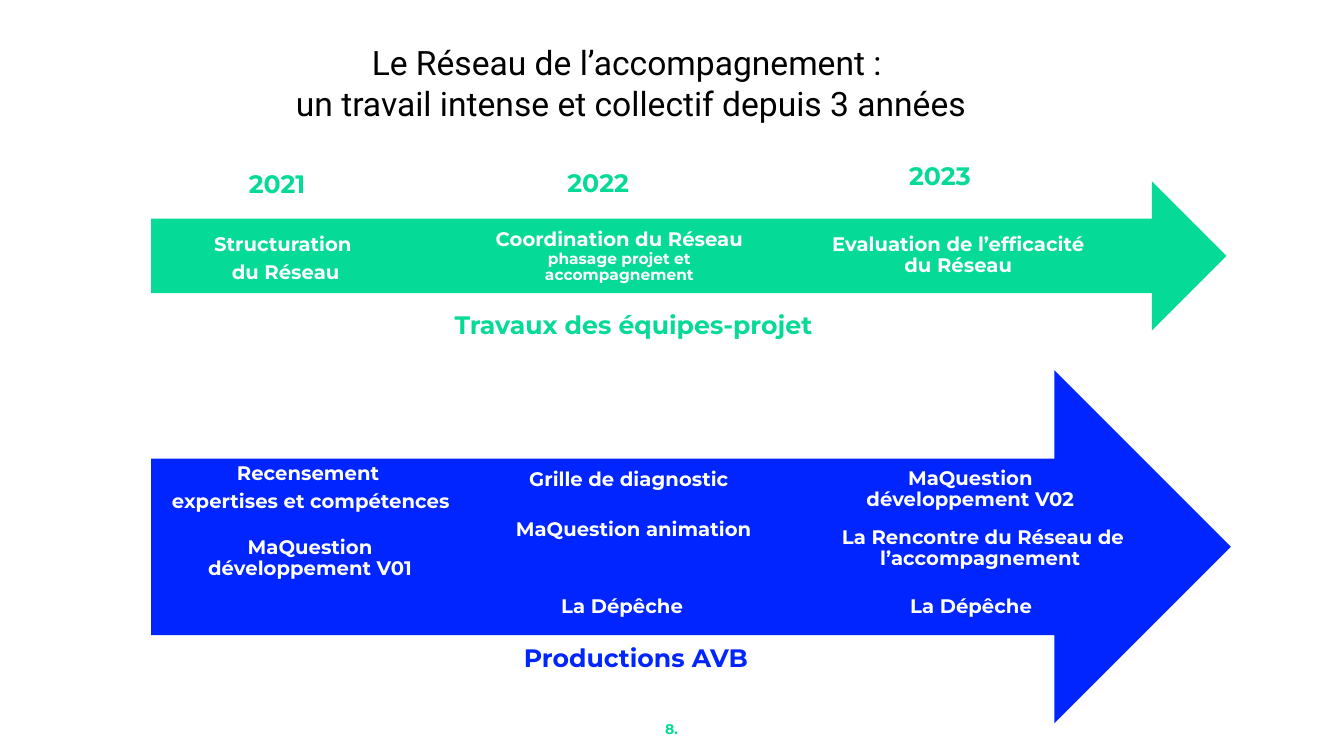
import pptx
import pptx.dml.color
import pptx.enum.shapes
import pptx.enum.text
import pptx.util

Cm = pptx.util.Cm
Pt = pptx.util.Pt
RGBColor = pptx.dml.color.RGBColor
ALIGN = pptx.enum.text.PP_ALIGN
ANCHOR = pptx.enum.text.MSO_ANCHOR

GREEN = RGBColor(0x05, 0xDA, 0x96)
BLUE = RGBColor(0x00, 0x25, 0xFF)
WHITE = RGBColor(0xFF, 0xFF, 0xFF)
BLACK = RGBColor(0x00, 0x00, 0x00)


def write_text(frame, text, *, size, color, font="Montserrat", bold=True,
               align=ALIGN.CENTER, spacing=1.0, after=0, detail="", detail_size=11):
    """Fill a frame with one paragraph per line, plus an optional smaller run."""
    frame.word_wrap = True
    for index, line in enumerate(text.split("\n")):
        paragraph = frame.paragraphs[0] if index == 0 else frame.add_paragraph()
        paragraph.alignment = align
        paragraph.line_spacing = spacing
        paragraph.space_before = Pt(0)
        paragraph.space_after = Pt(after)
        for words, points in ((line, size), (detail, detail_size)):
            if words:
                run = paragraph.add_run()
                run.text = words
                run.font.name = font
                run.font.size = Pt(points)
                run.font.bold = bold
                run.font.color.rgb = color


class RoadmapSlide:
    """Hold the current slide and the style of its elements."""

    def __init__(self, presentation):
        """Add a title-only slide."""
        self.slide = presentation.slides.add_slide(presentation.slide_layouts[5])

    def title(self, text, left, top, width, height):
        """Place and format the title."""
        title = self.slide.shapes.title
        title.left, title.top = Cm(left), Cm(top)
        title.width, title.height = Cm(width), Cm(height)
        title.text_frame.auto_size = pptx.enum.text.MSO_AUTO_SIZE.NONE
        title.text_frame.vertical_anchor = ANCHOR.TOP
        write_text(title.text_frame, text, size=24, color=BLACK, font="Roboto", bold=False)

    def arrow(self, left, top, width, height, color):
        """Draw a plain right arrow."""
        arrow = self.slide.shapes.add_shape(
            pptx.enum.shapes.MSO_SHAPE.RIGHT_ARROW, Cm(left), Cm(top), Cm(width), Cm(height))
        arrow.shadow.inherit = False
        arrow.fill.solid()
        arrow.fill.fore_color.rgb = color
        arrow.line.fill.background()

    def caption(self, text, left, top, width, height, **style):
        """Add a coloured text outside the arrows."""
        box = self.slide.shapes.add_textbox(Cm(left), Cm(top), Cm(width), Cm(height))
        write_text(box.text_frame, text, **style)

    def step(self, text, left, top, width, height, **style):
        """Add a white text in an unfilled outline on an arrow."""
        right, bottom = Cm(left + width), Cm(top + height)
        outline = self.slide.shapes.build_freeform(Cm(left), Cm(top))
        outline.add_line_segments([(right, Cm(top)), (right, bottom), (Cm(left), bottom)])
        step = outline.convert_to_shape()
        step.shadow.inherit = False
        step.fill.background()
        step.line.fill.background()
        frame = step.text_frame
        frame.vertical_anchor = ANCHOR.MIDDLE
        frame.margin_left = frame.margin_right = 0
        frame.margin_top = frame.margin_bottom = Cm(0.4)
        write_text(frame, text, size=14, color=WHITE, spacing=0.9, **style)


def main():
    """Build and save the presentation."""
    presentation = pptx.Presentation()
    presentation.slide_width, presentation.slide_height = Cm(33.87), Cm(19.05)
    roadmap = RoadmapSlide(presentation)

    roadmap.title("Le Réseau de l’accompagnement : \nun travail intense et collectif depuis 3 années",
                  3.53, 0.94, 24.74, 2.31)
    roadmap.arrow(3.81, 4.57, 27.1, 3.76, GREEN)
    roadmap.arrow(3.81, 9.33, 27.21, 8.9, BLUE)

    for year, left, top in (("2021", 6.02, 4.11), ("2022", 14.05, 4.09), ("2023", 22.66, 3.91)):
        roadmap.caption(year, left, top, 3.07, 1.02, size=18, color=GREEN, align=ALIGN.LEFT)
    roadmap.caption("Travaux des équipes-projet", 8.84, 7.67, 14.25, 1.02, size=18, color=GREEN)
    roadmap.caption("Productions AVB ", 8.99, 16.05, 14.25, 1.02, size=18, color=BLUE)
    roadmap.caption("8.", 2.42, 18.03, 29.01, 0.69, size=10, color=GREEN)

    roadmap.step("Structuration \ndu Réseau", 3.81, 5.38, 6.78, 2.31, after=5)
    roadmap.step("Coordination du Réseau ", 12.22, 5.53, 6.78, 1.88,
                 detail="phasage projet et accompagnement")
    roadmap.step("Evaluation de l’efficacité du Réseau", 20.76, 5.29, 6.78, 2.31)

    roadmap.step("Recensement \nexpertises et compétences", 3.29, 11.3, 9.09, 2.01, after=5)
    productions = (
        ("MaQuestion développement V01", 5.11, 12.73, 5.41, 2.69),
        ("Grille de diagnostic ", 12.62, 11.1, 6.6, 2.01),
        ("MaQuestion animation", 12.49, 12.19, 6.96, 2.34),
        ("La Dépêche", 12.38, 14.3, 6.6, 2.01),
        ("MaQuestion développement V02", 21.75, 11, 5.41, 2.69),
        ("La Rencontre du Réseau de l’accompagnement ", 21.08, 12.48, 7.39, 2.69),
        ("La Dépêche", 21.77, 13.95, 5.41, 2.69),
    )
    for production, left, top, width, height in productions:
        roadmap.step(production, left, top, width, height)

    presentation.save("out.pptx")


if __name__ == "__main__":
    main()
